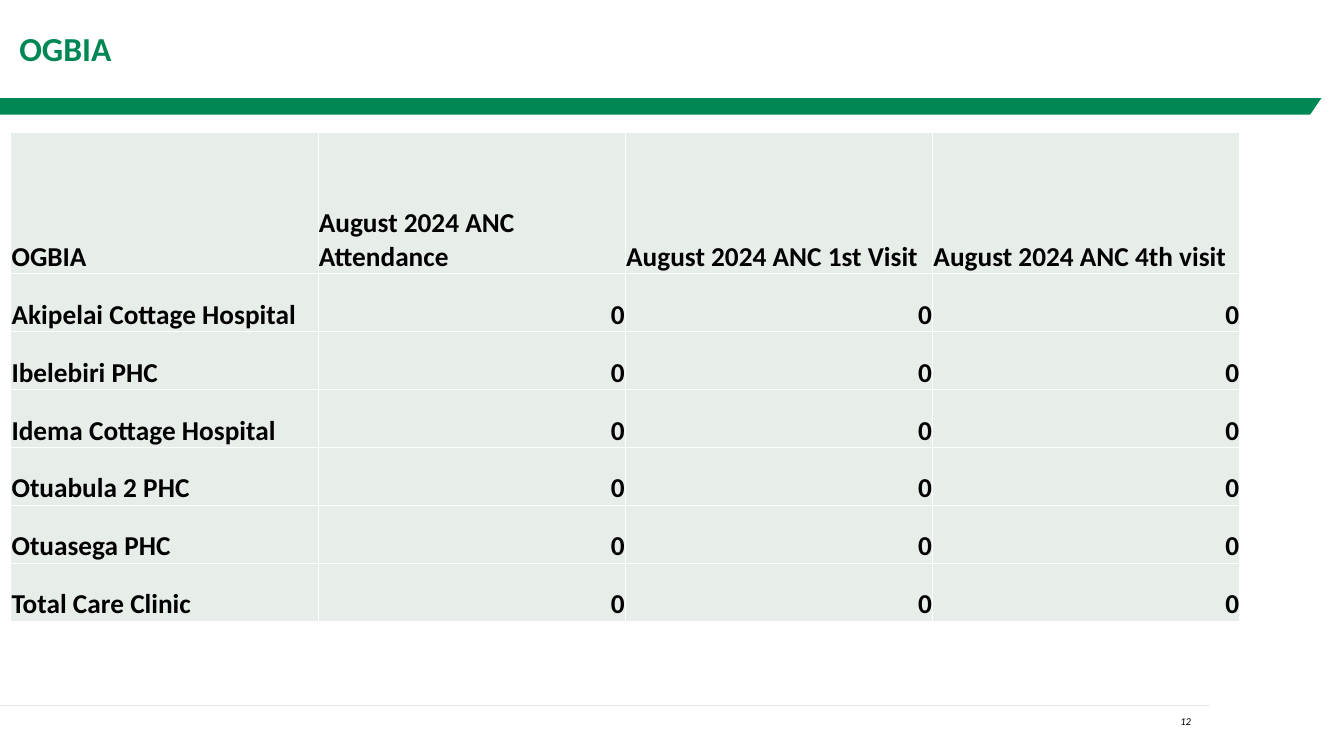
from dataclasses import dataclass

from lxml.etree import SubElement
from pptx import Presentation
from pptx.dml.color import RGBColor as RGB
from pptx.enum.shapes import MSO_CONNECTOR as CONNECTOR, MSO_SHAPE as SHAPE
from pptx.enum.text import MSO_ANCHOR as ANCHOR, PP_ALIGN as ALIGN
from pptx.oxml import parse_xml
from pptx.oxml.ns import nsdecls, qn
from pptx.util import Cm, Pt


@dataclass(frozen=True)
class Theme:
    font: str = "Calibri"
    green: str = "008753"
    white: str = "FFFFFF"
    black: str = "000000"
    rule: str = "E5E5E5"
    cell: str = "E7EDE9"
    title_size: float = 24.6
    table_size: float = 20
    number_size: float = 7.7


THEME = Theme()
WIDTH, HEIGHT = 34.77, 19.05

HEADER = ["OGBIA", "August 2024 ANC Attendance",
          "August 2024 ANC 1st Visit", "August 2024 ANC 4th visit"]
VISITS = {
    "Akipelai Cottage Hospital": (0, 0, 0),
    "Ibelebiri PHC": (0, 0, 0),
    "Idema Cottage Hospital": (0, 0, 0),
    "Otuabula 2 PHC": (0, 0, 0),
    "Otuasega PHC": (0, 0, 0),
    "Total Care Clinic": (0, 0, 0),
}


def set_font(p, size, color, bold=False, italic=False):
    f = p.font
    f.name, f.size, f.bold, f.italic = THEME.font, Pt(size), bold, italic
    f.color.rgb = RGB.from_string(color)


def add_plain(s, kind, x, y, w, h, color):
    """Add a flat shape without outline or shadow."""
    sp = s.shapes.add_shape(kind, Cm(x), Cm(y), Cm(w), Cm(h))
    sp.shadow.inherit = False
    sp.fill.solid()
    sp.fill.fore_color.rgb = RGB.from_string(color)
    sp.line.fill.background()


def add_title(s, text, x, y, w, h):
    sp = s.shapes.title
    sp.left, sp.top, sp.width, sp.height = Cm(x), Cm(y), Cm(w), Cm(h)
    tf = sp.text_frame
    tf.text = text
    tf.vertical_anchor = ANCHOR.MIDDLE
    tf.margin_left = Cm(0.5)
    p = tf.paragraphs[0]
    p.alignment = ALIGN.LEFT
    set_font(p, THEME.title_size, THEME.green, bold=True)


def add_band(s, x, y, w, h):
    """Draw the green band, its right end cut at a slant."""
    add_plain(s, SHAPE.RECTANGLE, x, y, w, h, THEME.green)
    cut = 0.72
    add_plain(s, SHAPE.ISOSCELES_TRIANGLE, x + w - cut / 2, y, cut, 0.53,
              THEME.white)


def add_footer(s, number, x, y, w, h):
    """Draw the footer rule with the page number below its right end."""
    line = s.shapes.add_connector(CONNECTOR.STRAIGHT, Cm(x), Cm(y),
                                  Cm(x + w), Cm(y))
    line.line.color.rgb = RGB.from_string(THEME.rule)
    line.line.width = Pt(1)
    SubElement(line._element.spPr, qn("a:effectLst"))

    box = 3.25
    sp = s.shapes.add_textbox(Cm(x + w - box - 0.23), Cm(y + h - 0.61),
                              Cm(box), Cm(0.61))
    tf = sp.text_frame
    tf.word_wrap = True
    tf.text = number
    p = tf.paragraphs[0]
    p.alignment = ALIGN.RIGHT
    set_font(p, THEME.number_size, THEME.black, italic=True)


def add_borders(cell):
    tc_pr = cell._tc.get_or_add_tcPr()
    for i, side in enumerate(("lnL", "lnR", "lnT", "lnB")):
        tc_pr.insert(i, parse_xml(
            f'<a:{side} {nsdecls("a")} w="{Pt(1)}"><a:solidFill>'
            f'<a:srgbClr val="{THEME.white}"/></a:solidFill></a:{side}>'))


def fill_cell(cell, value):
    cell.fill.solid()
    cell.fill.fore_color.rgb = RGB.from_string(THEME.cell)
    add_borders(cell)
    cell.vertical_anchor = ANCHOR.BOTTOM
    cell.margin_left = cell.margin_right = cell.margin_top = Cm(0.02)
    cell.margin_bottom = 0
    cell.text = str(value)
    p = cell.text_frame.paragraphs[0]
    p.alignment = ALIGN.RIGHT if isinstance(value, int) else ALIGN.LEFT
    set_font(p, THEME.table_size, THEME.black, bold=True)


def add_visits(s, x, y, w, h):
    """Add the table of visits: a tall header over equal rows."""
    rows = [HEADER] + [[name, *counts] for name, counts in VISITS.items()]
    header_h = 3.65
    row_h = (h - header_h) / len(VISITS)
    table = s.shapes.add_table(len(rows), len(HEADER), Cm(x), Cm(y),
                               Cm(w), Cm(h)).table
    for col in table.columns:
        col.width = Cm(w / len(HEADER))
    for i, values in enumerate(rows):
        table.rows[i].height = Cm(row_h if i else header_h)
        for j, value in enumerate(values):
            fill_cell(table.cell(i, j), value)


def main():
    prs = Presentation()
    prs.slide_width, prs.slide_height = Cm(WIDTH), Cm(HEIGHT)
    s = prs.slides.add_slide(prs.slide_layouts[5])
    add_title(s, "OGBIA", 0, 0, WIDTH, 2.51)
    add_band(s, 0, 2.54, 34.19, 0.43)
    add_footer(s, "12", 0, 18.26, 31.29, 0.74)
    add_visits(s, 0.28, 3.43, 31.8, 12.65)
    prs.save("out.pptx")


if __name__ == "__main__":
    main()
